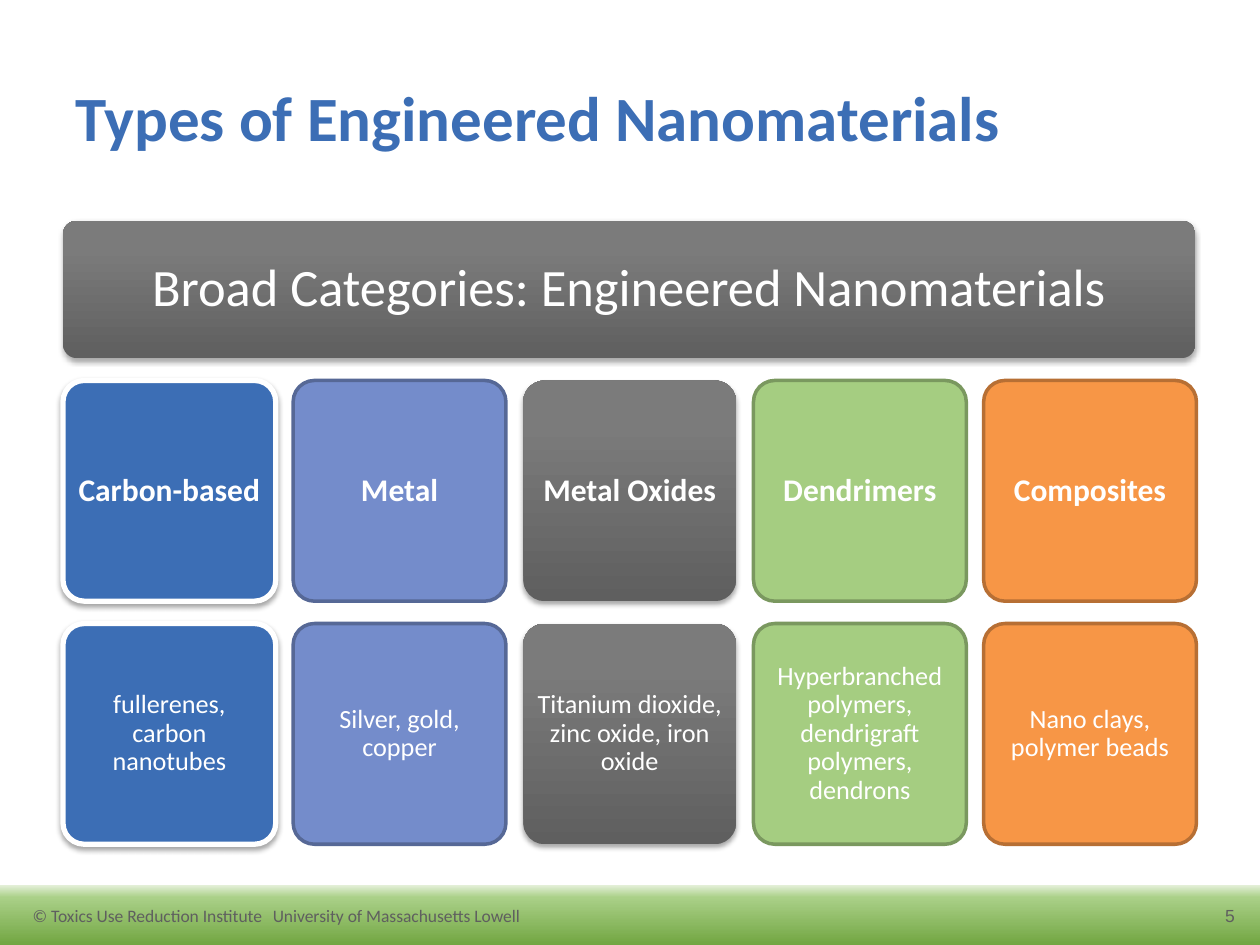
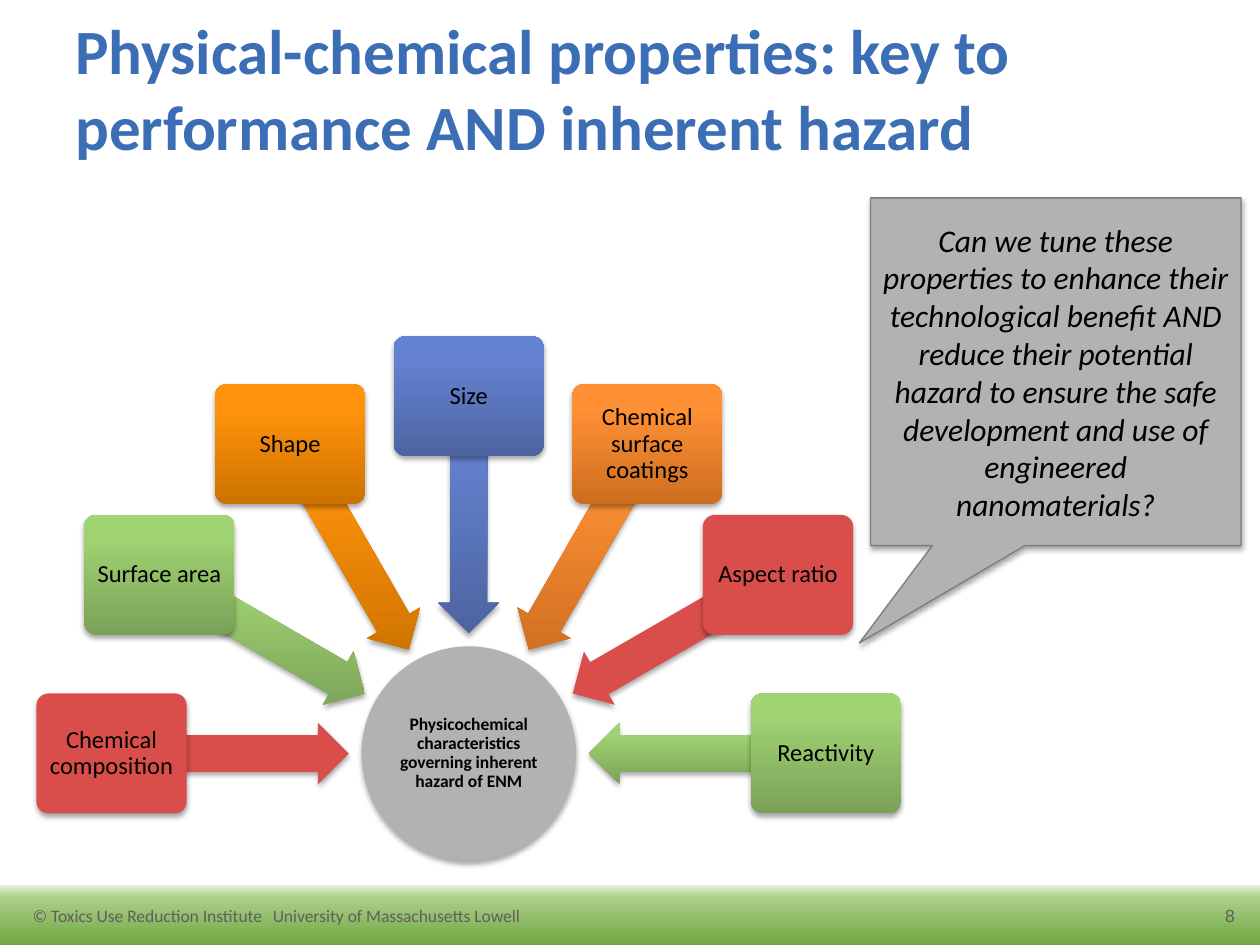
import copy
import math

import pptx
import pptx.dml.color
import pptx.enum.shapes
import pptx.enum.text
import pptx.oxml
import pptx.oxml.ns
import pptx.util

Cm = pptx.util.Cm
Pt = pptx.util.Pt
RGB = pptx.dml.color.RGBColor.from_string
qn = pptx.oxml.ns.qn
SHAPE = pptx.enum.shapes.MSO_SHAPE
ALIGN = pptx.enum.text.PP_ALIGN
ANCHOR = pptx.enum.text.MSO_ANCHOR

# A tuple is a gradient, from bottom to top, with stops at 0, 80 and 100 %
COLOURS = {
    "band": ("72A642", "AAD088", "E3EFD7"),
    "title": "3C6EB5",
    "footer": "5F5F5F",
    "white": "FFFFFF",
    "black": "000000",
    "blue": "3C6EB5",
    "periwinkle": "748CCB",
    "periwinkle edge": "566896",
    "grey": ("5F5F5F", "7B7B7B", "7C7C7C"),
    "leaf": "A5CD81",
    "leaf edge": "7A985F",
    "orange": "F79646",
    "orange edge": "B76F34",
    "silver": "B2B2B2",
    "silver edge": "7C7C7C",
    "red": "D94E4A",
    "green": ("7BA158", "9FD272", "A0D571"),
    "amber": ("CD7200", "FF930B", "FF930D"),
    "indigo": ("4D64A1", "6482D1", "6282D4"),
    "tangerine": ("CC6E20", "FF9034", "FF9136"),
}


def add_box(page, kind, left, top, width, height, fill, edge=None, edge_width=0,
            shadow=True, adjust=()):
    box = page.shapes.add_shape(kind, Cm(left), Cm(top), Cm(width), Cm(height))
    for index, value in enumerate(adjust):
        box.adjustments[index] = value
    colour = COLOURS[fill]
    properties = box._element.spPr
    if isinstance(colour, tuple):
        box.fill.gradient()
        box.fill.gradient_angle = 90
        gradient = properties.find(qn("a:gradFill"))
        gradient.set("rotWithShape", "0")
        stops = gradient.find(qn("a:gsLst"))
        stops.append(copy.deepcopy(stops[0]))
        for stop, position, shade in zip(box.fill.gradient_stops, (0, 0.8, 1), colour):
            stop.position = position
            stop.color.rgb = RGB(shade)
    else:
        box.fill.solid()
        box.fill.fore_color.rgb = RGB(colour)
    if edge:
        box.line.color.rgb = RGB(COLOURS[edge])
        box.line.width = Pt(edge_width)
    else:
        box.line.fill.background()
    box.shadow.inherit = False
    if shadow:
        properties.find(qn("a:effectLst")).append(pptx.oxml.parse_xml(
            f'<a:outerShdw {pptx.oxml.ns.nsdecls("a")} blurRad="{Pt(3.1)}" '
            f'dist="{Pt(1.8)}" dir="5400000" rotWithShape="0">'
            '<a:srgbClr val="000000"><a:alpha val="35000"/></a:srgbClr></a:outerShdw>'))
    return box


def write(box, text, size, colour, align=ALIGN.CENTER, inset=None, spacing=None,
          bold=False, italic=False, font="Calibri", wrap=True):
    frame = box.text_frame
    frame.word_wrap = wrap
    frame.vertical_anchor = ANCHOR.MIDDLE
    if inset is not None:
        frame.margin_left = frame.margin_right = Cm(inset)
        frame.margin_top = frame.margin_bottom = Cm(inset)
    para = frame.paragraphs[0]
    para.text = text
    para.alignment = align
    if spacing:
        para.line_spacing = spacing
    para.font.name = font
    para.font.size = Pt(size)
    para.font.bold = bold
    para.font.italic = italic
    para.font.color.rgb = RGB(COLOURS[colour])
    return para


deck = pptx.Presentation()
deck.slide_width = Cm(25.4)
deck.slide_height = Cm(19.05)

# Shared band, footer, page number and title
pages = []
for number, title, top, height in (
    ("5", "Types of Engineered Nanomaterials", 0.76, 3.18),
    ("8", "Physical-chemical properties: key to performance AND inherent hazard", 0.05, 3.43),
):
    page = deck.slides.add_slide(deck.slide_layouts[6])
    pages.append(page)
    add_box(page, SHAPE.RECTANGLE, 0, 17.85, 25.4, 1.2, "band", shadow=False)
    number_box = page.shapes.add_textbox(Cm(23.9), Cm(18.24), Cm(1.24), Cm(0.43))
    write(number_box, number, 10, "footer", ALIGN.RIGHT, font="Arial")
    footer_box = page.shapes.add_textbox(Cm(0.41), Cm(18.12), Cm(11.05), Cm(0.68))
    footer = write(footer_box,
                   "© Toxics Use Reduction Institute\tUniversity of Massachusetts Lowell",
                   10, "footer", ALIGN.LEFT, wrap=False)
    footer._p.get_or_add_pPr().insert(0, pptx.oxml.parse_xml(
        f'<a:tabLst {pptx.oxml.ns.nsdecls("a")}><a:tab pos="{Cm(4.84)}" algn="l"/></a:tabLst>'))
    title_box = page.shapes.add_textbox(Cm(1.27), Cm(top), Cm(22.86), Cm(height))
    write(title_box, title, 36, "title", ALIGN.LEFT, bold=True)

types_page, properties_page = pages

# Types: heading bar over five columns of category and examples
heading = add_box(types_page, SHAPE.ROUNDED_RECTANGLE, 1.27, 4.45, 22.83, 2.77, "grey",
                  adjust=[0.1])
write(heading, "Broad Categories: Engineered Nanomaterials", 30, "white",
      inset=0.3, spacing=0.9)

categories = (
    ("Carbon-based", "fullerenes, carbon nanotubes", "blue", "white", 3, True),
    ("Metal", "Silver, gold, copper", "periwinkle", "periwinkle edge", 2, False),
    ("Metal Oxides", "Titanium dioxide, zinc oxide, iron oxide", "grey", None, 0, True),
    ("Dendrimers", "Hyperbranched polymers, dendrigraft polymers, dendrons",
     "leaf", "leaf edge", 2, False),
    ("Composites", "Nano clays, polymer beads", "orange", "orange edge", 2, False),
)
for column, (name, examples, fill, edge, edge_width, shadow) in enumerate(categories):
    for top, text, size, inset, bold in ((7.67, name, 18, 0.18, True),
                                         (12.57, examples, 15, 0.15, False)):
        card = add_box(types_page, SHAPE.ROUNDED_RECTANGLE, 1.27 + 4.64 * column, top,
                       4.29, 4.45, fill, edge, edge_width, shadow, [0.1])
        write(card, text, size, "white", inset=inset, spacing=0.9, bold=bold)

# Properties: hub with seven boxes on a half circle, arrows pointing inwards
hub_x, hub_y, hub_size = 9.45, 15.19, 4.32
hub = add_box(properties_page, SHAPE.OVAL, hub_x - hub_size / 2, hub_y - hub_size / 2,
              hub_size, hub_size, "silver")
write(hub, "Physicochemical characteristics governing inherent hazard of ENM", 10, "black",
      inset=0.03, spacing=0.9, bold=True)

box_radius, box_width, box_height = 7.2, 3.03, 2.42
arrow_radius, arrow_length, arrow_height = 4.81, 4.78, 1.24
characteristics = (
    ("Chemical composition", "red"),
    ("Surface area", "green"),
    ("Shape", "amber"),
    ("Size", "indigo"),
    ("Chemical surface coatings", "tangerine"),
    ("Aspect ratio", "red"),
    ("Reactivity", "green"),
)
for index, (name, fill) in enumerate(characteristics):
    turn = 180 + 30 * index
    across, down = math.cos(math.radians(turn)), math.sin(math.radians(turn))
    arrow = add_box(properties_page, SHAPE.LEFT_ARROW,
                    hub_x + arrow_radius * across - arrow_length / 2,
                    hub_y + arrow_radius * down - arrow_height / 2,
                    arrow_length, arrow_height, fill, adjust=[0.6, 0.5])
    arrow.rotation = turn % 360
    label = add_box(properties_page, SHAPE.ROUNDED_RECTANGLE,
                    hub_x + box_radius * across - box_width / 2,
                    hub_y + box_radius * down - box_height / 2,
                    box_width, box_height, fill, adjust=[0.1])
    write(label, name, 14, "black", inset=0.07, spacing=0.9)

# Callout with the question
callout = add_box(properties_page, SHAPE.RECTANGULAR_CALLOUT, 17.55, 3.99, 7.47, 7.01,
                  "silver", "silver edge", 0.75, adjust=[-0.53, 0.78])
write(callout, "Can we tune these properties to enhance their technological benefit AND "
      "reduce their potential hazard to ensure the safe development and use of "
      "engineered nanomaterials?", 18, "black", italic=True)

deck.save("out.pptx")
